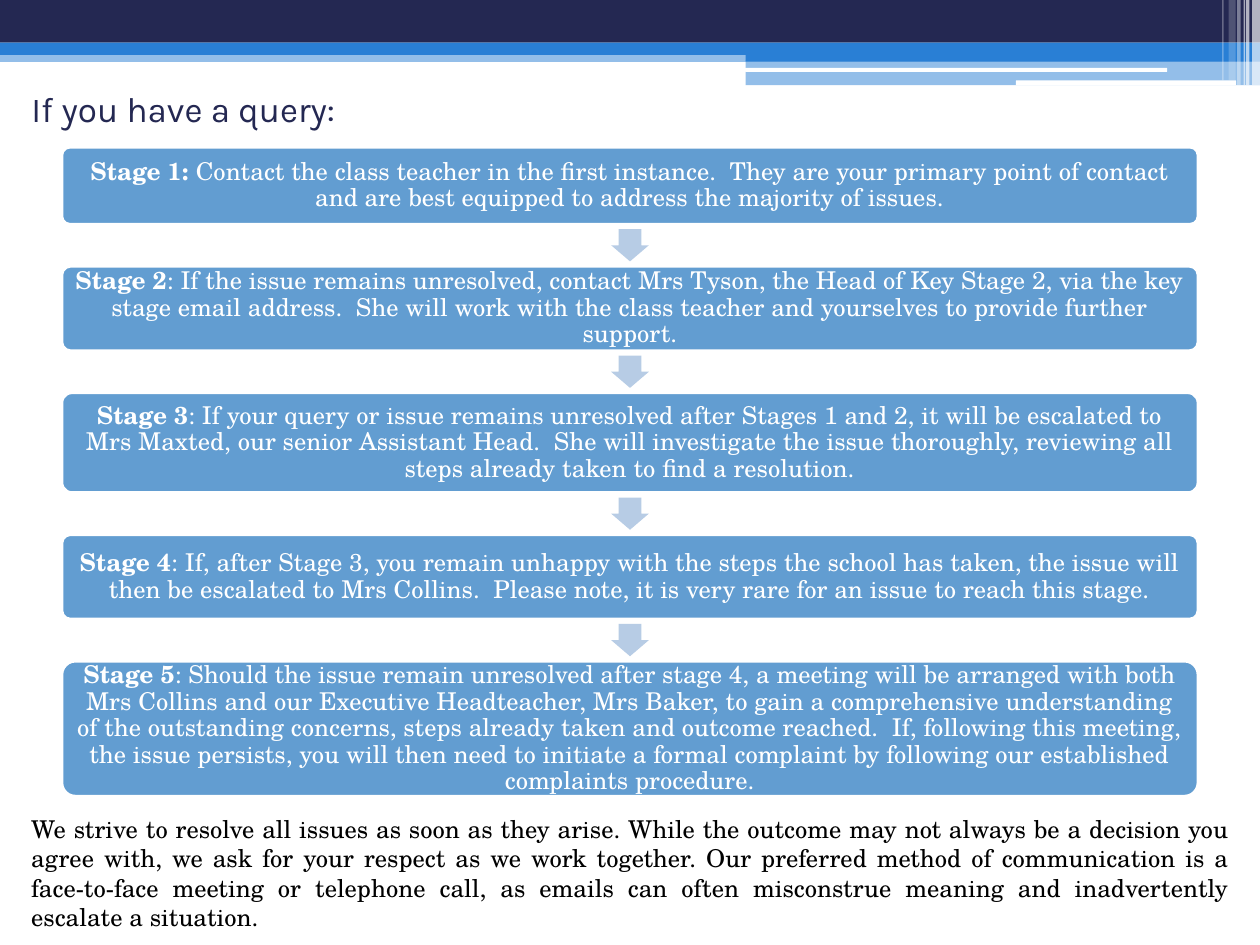
import pptx
import pptx.util
import pptx.dml.color
import pptx.enum.shapes
import pptx.enum.text
import pptx.oxml.ns
import lxml.etree

Cm = pptx.util.Cm
Shape = pptx.enum.shapes.MSO_SHAPE
Align = pptx.enum.text.PP_ALIGN
Anchor = pptx.enum.text.MSO_ANCHOR
AutoSize = pptx.enum.text.MSO_AUTO_SIZE

colors = {
    "navy": "242852",
    "blue": "297FD5",
    "stage": "629DD1",
    "arrow": "B7CCE5",
    "white": "FFFFFF",
    "black": "000000",
}


def add_block(kind, left, top, width, height, color, opacity=100):
    shape = slide.shapes.add_shape(kind, Cm(left), Cm(top), Cm(width), Cm(height))
    shape.shadow.inherit = False
    shape.line.fill.background()
    shape.fill.solid()
    shape.fill.fore_color.rgb = pptx.dml.color.RGBColor.from_string(colors[color])
    if opacity < 100:
        color_element = shape.fill._xPr.find(".//" + pptx.oxml.ns.qn("a:srgbClr"))
        alpha = lxml.etree.SubElement(color_element, pptx.oxml.ns.qn("a:alpha"))
        alpha.set("val", str(opacity * 1000))
    return shape


def add_run(paragraph, text, font_name, size, color, bold=False):
    run = paragraph.add_run()
    run.text = text
    font_format = {"name": font_name, "size": pptx.util.Pt(size), "bold": bold}
    for attribute, value in font_format.items():
        setattr(run.font, attribute, value)
    run.font.color.rgb = pptx.dml.color.RGBColor.from_string(colors[color])


presentation = pptx.Presentation()
presentation.slide_width = Cm(25.4)
presentation.slide_height = Cm(19.05)
slide = presentation.slides.add_slide(presentation.slide_layouts[5])

header_bands = [
    (0, 1.02, 25.4, 0.23, "blue", 50),
    (0, 0, 25.4, 0.86, "navy", 100),
    (0, 0.86, 25.4, 0.25, "blue", 100),
    (15.03, 0.99, 10.37, 0.25, "blue", 100),
    (15.03, 1.22, 10.37, 0.5, "blue", 50),
]
for left, top, width, height, color, opacity in header_bands:
    add_block(Shape.RECTANGLE, left, top, width, height, color, opacity)

for left, top, width, height in [(15.02, 1.37, 8.51, 0.08), (20.48, 1.62, 4.44, 0.1)]:
    add_block(Shape.ROUNDED_RECTANGLE, left, top, width, height, "white")

corner_stripes = [
    (25.24, 0.16, 1.72, 65),
    (25.12, 0.07, 1.72, 65),
    (25.07, 0.03, 1.72, 60),
    (24.94, 0.07, 1.72, 40),
    (24.77, 0.14, 1.62, 20),
    (24.64, 0.03, 1.62, 30),
]
for left, width, height, opacity in corner_stripes:
    add_block(Shape.RECTANGLE, left, 0, width, height, "white", opacity)

title = slide.shapes.title
slide.shapes._spTree.append(title.element)
title_place = {"left": Cm(0.38), "top": Cm(0.71), "width": Cm(7.04), "height": Cm(2.97)}
for attribute, value in title_place.items():
    setattr(title, attribute, value)
title.text_frame.auto_size = AutoSize.NONE
title.text_frame.vertical_anchor = Anchor.MIDDLE
title_paragraph = title.text_frame.paragraphs[0]
title_paragraph.alignment = Align.LEFT
add_run(title_paragraph, "If you have a query:", "Karla", 20, "navy")

stages = [
    (1.55, "Stage 1: ", "Contact the class teacher in the first instance.  They are your primary point "
     "of contact and are best equipped to address the majority of issues."),
    (1.7, "Stage 2", ": If the issue remains unresolved, contact Mrs Tyson, the Head of Key Stage 2, "
     "via the key stage email address.  She will work with the class teacher and yourselves to "
     "provide further support."),
    (2.01, "Stage 3", ": If your query or issue remains unresolved after Stages 1 and 2, it will be "
     "escalated to Mrs Maxted, our senior Assistant Head.  She will investigate the issue "
     "thoroughly, reviewing all steps already taken to find a resolution."),
    (1.7, "Stage 4", ": If, after Stage 3, you remain unhappy with the steps the school has taken, "
     "the issue will then be escalated to Mrs Collins.  Please note, it is very rare for an issue "
     "to reach this stage."),
    (2.72, "Stage 5", ": Should the issue remain unresolved after stage 4, a meeting will be arranged "
     "with both Mrs Collins and our Executive Headteacher, Mrs Baker, to gain a comprehensive "
     "understanding of the outstanding concerns, steps already taken and outcome reached.  If, "
     "following this meeting, the issue persists, you will then need to initiate a formal "
     "complaint by following our established complaints procedure."),
]
stage_width = 22.9
stage_gap = 0.85
arrow_length = 0.65
arrow_width = 0.76
center = 12.7
stage_frame = {
    "word_wrap": True,
    "vertical_anchor": Anchor.MIDDLE,
    "margin_left": Cm(0.15),
    "margin_right": Cm(0.15),
    "margin_top": Cm(0.15),
    "margin_bottom": Cm(0.15),
}

top = 2.97
for number, (height, label, text) in enumerate(stages):
    if number:
        arrow = add_block(Shape.RIGHT_ARROW, center - arrow_length / 2,
                          top - stage_gap / 2 - arrow_width / 2,
                          arrow_length, arrow_width, "arrow")
        arrow.rotation = 90
        arrow.adjustments[0] = 0.6
        arrow.adjustments[1] = 0.5
    stage = add_block(Shape.ROUNDED_RECTANGLE, center - stage_width / 2, top,
                      stage_width, height, "stage")
    stage.adjustments[0] = 0.1
    stage.line.color.rgb = pptx.dml.color.RGBColor.from_string(colors["white"])
    stage.line.width = pptx.util.Pt(1.5)
    for attribute, value in stage_frame.items():
        setattr(stage.text_frame, attribute, value)
    paragraph = stage.text_frame.paragraphs[0]
    paragraph.alignment = Align.CENTER
    paragraph.line_spacing = 0.9
    add_run(paragraph, label, "TeX Gyre Schola", 14, "white", True)
    add_run(paragraph, text, "TeX Gyre Schola", 14, "white")
    top += height + stage_gap

closing = slide.shapes.add_textbox(Cm(0.38), Cm(16.28), Cm(24.66), Cm(2.06))
closing.text_frame.word_wrap = True
closing.text_frame.auto_size = AutoSize.SHAPE_TO_FIT_TEXT
closing_paragraph = closing.text_frame.paragraphs[0]
closing_paragraph.alignment = Align.JUSTIFY
add_run(
    closing_paragraph,
    "We strive to resolve all issues as soon as they arise. While the outcome may not always be a "
    "decision you agree with, we ask for your respect as we work together. Our preferred method of "
    "communication is a face-to-face meeting or telephone call, as emails can often misconstrue "
    "meaning and inadvertently escalate a situation.",
    "TeX Gyre Schola", 14, "black",
)

presentation.save("out.pptx")
